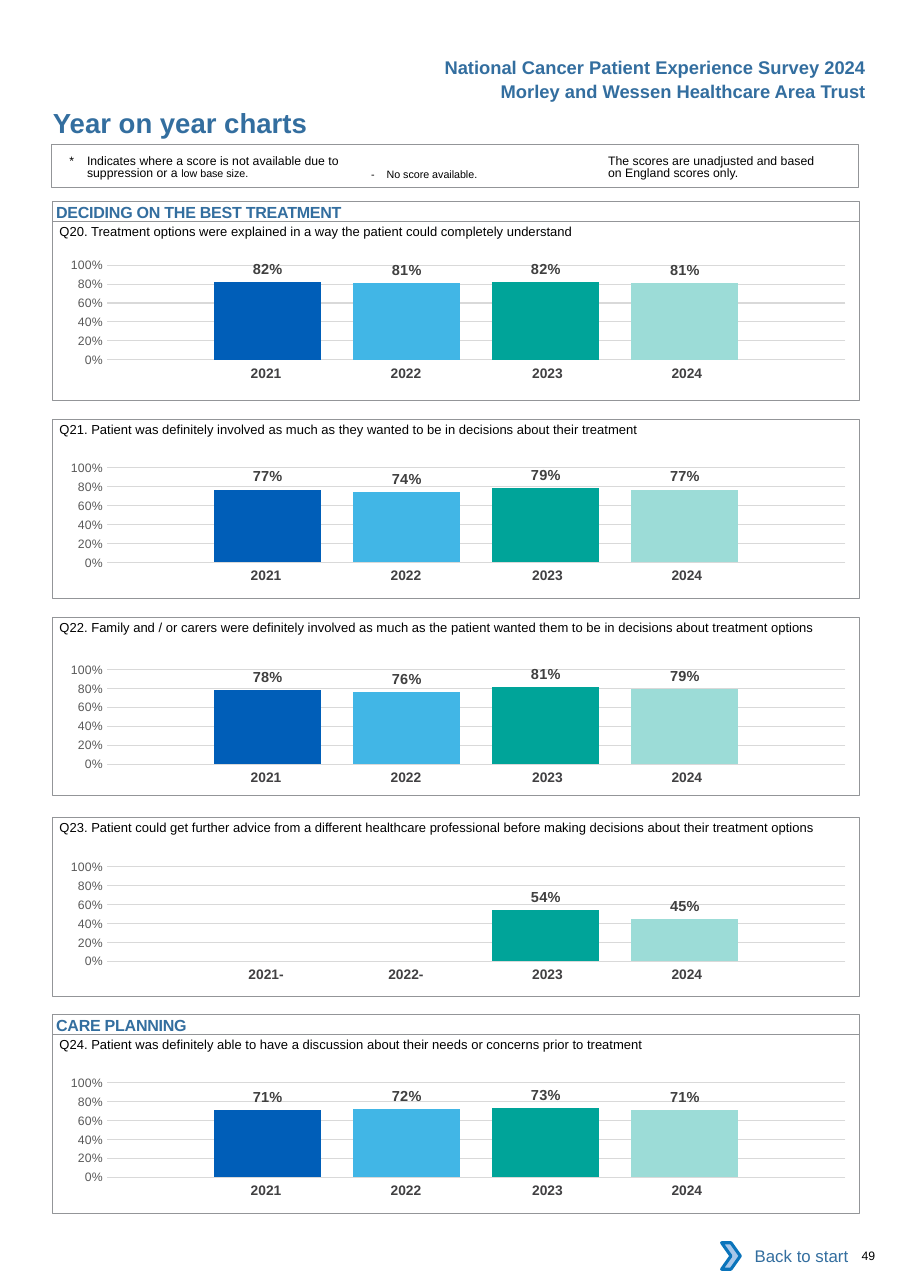
import lxml.etree
import pptx
import pptx.chart.data
import pptx.dml.color
import pptx.enum.chart
import pptx.enum.shapes
import pptx.enum.text
import pptx.oxml.ns
import pptx.util

Inches = pptx.util.Inches
Pt = pptx.util.Pt
Color = pptx.dml.color.RGBColor
Shape = pptx.enum.shapes.MSO_SHAPE
Align = pptx.enum.text.PP_ALIGN
Anchor = pptx.enum.text.MSO_ANCHOR
qn = pptx.oxml.ns.qn

BLACK = Color(0x00, 0x00, 0x00)
WHITE = Color(0xFF, 0xFF, 0xFF)
TITLE = Color(0x33, 0x6E, 0x9F)
FRAME = Color(0x93, 0x95, 0x98)
YEAR = Color(0x41, 0x40, 0x42)
LABEL = Color(0x40, 0x40, 0x40)
AXIS = Color(0x59, 0x59, 0x59)
GRID = Color(0xD9, 0xD9, 0xD9)
ARROW = Color(0xA8, 0xC7, 0xE9)
EDGE = Color(0x0A, 0x74, 0xBB)
BARS = [Color(0x00, 0x5E, 0xB8), Color(0x41, 0xB6, 0xE6),
        Color(0x00, 0xA4, 0x99), Color(0x9C, 0xDC, 0xD7)]

LEFT, WIDTH = 0.48, 7.32
YEARS = ["2021", "2022", "2023", "2024"]
# frame top, chart top, question, scores
PANELS = [
    (2.01, 2.22, "Q20. Treatment options were explained in a way the patient "
     "could completely understand", [0.82, 0.81, 0.82, 0.81]),
    (3.81, 4.06, "Q21. Patient was definitely involved as much as they wanted "
     "to be in decisions about their treatment", [0.77, 0.74, 0.79, 0.77]),
    (5.6, 5.89, "Q22. Family and / or carers were definitely involved as much as "
     "the patient wanted them to be in decisions about treatment options",
     [0.78, 0.76, 0.81, 0.79]),
    (7.42, 7.68, "Q23. Patient could get further advice from a different "
     "healthcare professional before making decisions about their treatment "
     "options", [None, None, 0.54, 0.45]),
    (9.39, 9.64, "Q24. Patient was definitely able to have a discussion about "
     "their needs or concerns prior to treatment", [0.71, 0.72, 0.73, 0.71]),
]


def style(font, size, color, bold=False):
    font.name = "Arial"
    font.size = Pt(size)
    font.bold = bold
    font.color.rgb = color


def write(frame, text, size, color, bold=False, align=Align.LEFT,
          inset=(0, 0, 0, 0)):
    """Fill a text frame with one line; inset is left, top, right, bottom."""
    frame.text = text
    frame.word_wrap = True
    frame.auto_size = pptx.enum.text.MSO_AUTO_SIZE.NONE
    frame.vertical_anchor = Anchor.TOP
    (frame.margin_left, frame.margin_top,
     frame.margin_right, frame.margin_bottom) = map(Inches, inset)
    line = frame.paragraphs[0]
    line.alignment = align
    for run in line.runs:
        style(run.font, size, color, bold)
    return line


def add_text(slide, box, text, size, color, **look):
    shape = slide.shapes.add_textbox(*map(Inches, box))
    return write(shape.text_frame, text, size, color, **look)


def add_box(slide, box, fill=None, edge=None, weight=0.5, kind=Shape.RECTANGLE):
    shape = slide.shapes.add_shape(kind, *map(Inches, box))
    shape.shadow.inherit = False
    if fill is None:
        shape.fill.background()
    else:
        shape.fill.solid()
        shape.fill.fore_color.rgb = fill
    if edge is None:
        shape.line.fill.background()
    else:
        shape.line.color.rgb = edge
        shape.line.width = Pt(weight)
    return shape


def add_years(slide, top, scores):
    """Year row under a chart; a dash marks a year without a score."""
    table = slide.shapes.add_table(1, 4, Inches(1.73), Inches(top),
                                   Inches(5.15), Inches(0.27)).table
    table.first_row = table.horz_banding = False
    table.rows[0].height = Inches(0.27)
    widths, rights = [1.27, 1.27, 1.34, 1.27], [0, 0, 0.04, 0.12]
    for i, (year, score) in enumerate(zip(YEARS, scores)):
        table.columns[i].width = Inches(widths[i])
        cell = table.cell(0, i)
        cell.fill.background()
        cell.margin_left, cell.margin_right = Inches(0.1), Inches(rights[i])
        cell.margin_top = cell.margin_bottom = Inches(0.05)
        cell.text = year if score is not None else year + "-"
        line = cell.text_frame.paragraphs[0]
        line.alignment = Align.CENTER
        style(line.runs[0].font, 9, YEAR, True)


def place_plot(chart, x, y, w, h):
    """Fix the inner plot area as shares of the chart."""
    area = chart.element.find(".//" + qn("c:plotArea"))
    for old in area.findall(qn("c:layout")):
        area.remove(old)
    layout = lxml.etree.Element(qn("c:layout"))
    manual = lxml.etree.SubElement(layout, qn("c:manualLayout"))
    for tag, val in [("layoutTarget", "inner"), ("xMode", "edge"),
                     ("yMode", "edge"), ("x", x), ("y", y), ("w", w), ("h", h)]:
        lxml.etree.SubElement(manual, qn("c:" + tag)).set("val", str(val))
    area.insert(0, layout)


def add_bars(slide, top, scores):
    data = pptx.chart.data.CategoryChartData(number_format="0%")
    data.categories = ["1"]
    for i, score in enumerate(scores, 1):
        data.add_series(f"Series {i}", [score])
    chart = slide.shapes.add_chart(
        pptx.enum.chart.XL_CHART_TYPE.COLUMN_CLUSTERED, Inches(0.39),
        Inches(top), Inches(WIDTH), Inches(1.29), data).chart
    chart.has_title = chart.has_legend = False
    chart.font.name, chart.font.size = "Calibri", Pt(10)
    chart.font.color.rgb = BLACK
    place_plot(chart, 0.08, 0.145, 0.915, 0.666)

    chart.category_axis.visible = False
    axis = chart.value_axis
    axis.minimum_scale, axis.maximum_scale, axis.major_unit = 0, 1, 0.2
    axis.major_tick_mark = pptx.enum.chart.XL_TICK_MARK.NONE
    axis.format.line.fill.background()
    axis.major_gridlines.format.line.color.rgb = GRID
    axis.major_gridlines.format.line.width = Pt(0.75)
    axis.tick_labels.number_format = "0%"
    axis.tick_labels.number_format_is_linked = False
    style(axis.tick_labels.font, 8, AXIS)

    plot = chart.plots[0]
    plot.gap_width, plot.overlap = 200, -30
    plot.vary_by_categories = False
    for series, color in zip(plot.series, BARS):
        series.format.fill.solid()
        series.format.fill.fore_color.rgb = color
        labels = series.data_labels
        labels.show_value = True
        labels.position = pptx.enum.chart.XL_LABEL_POSITION.OUTSIDE_END
        labels.number_format = "0%"
        labels.number_format_is_linked = False
        style(labels.font, 9.5, LABEL, True)


def add_panel(slide, top, plot_top, text, scores):
    add_years(slide, plot_top + 1.05, scores)
    add_bars(slide, plot_top, scores)
    add_box(slide, (LEFT, top, WIDTH, 1.62), edge=FRAME)
    add_text(slide, (0.54, top - 0.07, 7.24, 0.24), text, 8.5, BLACK,
             inset=(0, 0.09, 0, 0))


def add_section(slide, top, text):
    box = add_box(slide, (LEFT, top, WIDTH, 0.18), edge=FRAME)
    write(box.text_frame, text, 10.5, TITLE, bold=True, inset=(0.03, 0.01, 0, 0))
    for props in box.element.iter(qn("a:rPr")):
        props.set("spc", "-15")


def hang(line, indent):
    line_props = line.runs[0].font and line._p.get_or_add_pPr()
    line_props.set("marL", str(Inches(indent)))
    line_props.set("indent", str(-Inches(indent)))


def add_key(slide):
    add_box(slide, (0.47, 1.31, WIDTH, 0.39), edge=FRAME, weight=0.75)
    pad = (0, 0.03, 0, 0)
    star = add_text(slide, (0.63, 1.38, 2.45, 0.27),
                    "*\tIndicates where a score is not available due to "
                    "suppression or a ", 8, BLACK, inset=pad)
    low = star.add_run()
    low.text = "low base size."
    style(low.font, 7, BLACK)
    hang(star, 0.16)
    dash = add_text(slide, (3.37, 1.47, 1.73, 0.24), "-\tNo score available.",
                    7, BLACK, inset=(0, 0.05, 0, 0))
    hang(dash, 0.14)
    note = add_text(slide, (5.52, 1.38, 1.97, 0.27),
                    "The scores are unadjusted and based on England scores only.",
                    8, BLACK, inset=pad)
    star.line_spacing = note.line_spacing = Pt(8.1)


def add_heads(slide):
    title = slide.shapes.title
    title.left, title.top, title.width, title.height = map(
        Inches, (0.48, 0.96, 4.5, 0.3))
    write(title.text_frame, "Year on year charts", 18, TITLE, bold=True)
    for top, text in [(0.46, "National Cancer Patient Experience Survey 2024"),
                      (0.68, "Morley and Wessen Healthcare Area Trust")]:
        add_text(slide, (3.46, top, 4.5, 0.3), text, 12, TITLE, bold=True,
                 align=Align.RIGHT, inset=(0.1, 0.05, 0.1, 0.05))


def add_foot(slide):
    back = add_box(slide, (6.62, 11.19, 1.18, 0.42), fill=WHITE)
    write(back.text_frame, "Back to start", 11, TITLE, align=Align.RIGHT,
          inset=(0.1, 0.05, 0.1, 0.05))
    back.text_frame.vertical_anchor = Anchor.MIDDLE
    add_box(slide, (6.55, 11.28, 0.17, 0.24), fill=ARROW, edge=EDGE, weight=2,
            kind=Shape.CHEVRON)
    add_text(slide, (7.82, 11.33, 0.41, 0.13), "49", 8, BLACK)


def main():
    deck = pptx.Presentation()
    deck.slide_width, deck.slide_height = Inches(8.26), Inches(11.69)
    slide = deck.slides.add_slide(deck.slide_layouts[5])
    add_heads(slide)
    add_key(slide)
    for panel in PANELS:
        add_panel(slide, *panel)
    add_section(slide, 1.83, "DECIDING ON THE BEST TREATMENT")
    add_section(slide, 9.21, "CARE PLANNING")
    add_foot(slide)
    deck.save("out.pptx")


if __name__ == "__main__":
    main()
